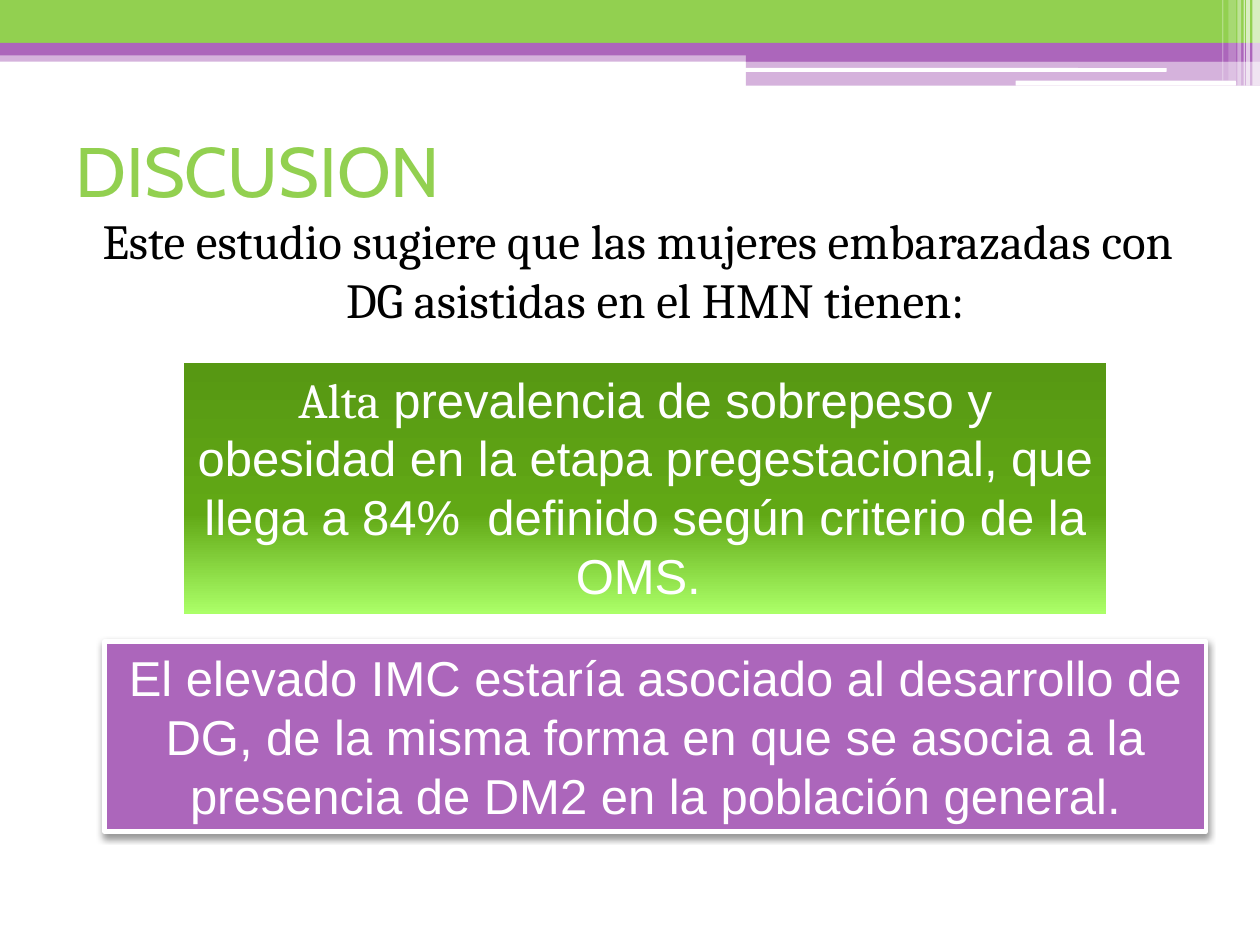
from lxml.etree import SubElement
from pptx import Presentation
from pptx.dml.color import RGBColor
from pptx.enum.shapes import MSO_SHAPE
from pptx.enum.text import MSO_ANCHOR, PP_ALIGN
from pptx.oxml import parse_xml
from pptx.oxml.ns import nsdecls, qn
from pptx.util import Inches, Pt

COLORS = {
    "green": "92D050",
    "purple": "AC66BB",
    "white": "FFFFFF",
    "black": "000000",
    "green_dark": "579813",
    "green_middle": "61A815",
    "green_light": "ABFF68",
}

HEADER_BANDS = [
    (0, 0.4, 10, 0.09, "purple", 50),
    (0, 0, 10, 0.34, "green", 100),
    (0, 0.34, 10, 0.1, "purple", 100),
    (5.92, 0.39, 4.08, 0.1, "purple", 100),
    (5.92, 0.48, 4.08, 0.2, "purple", 50),
]
HEADER_LINES = [(5.91, 0.54, 3.35, 0.03), (8.06, 0.64, 1.75, 0.04)]
EDGE_STRIPES = [
    (9.94, 0.06, 0.68, 65),
    (9.89, 0.03, 0.68, 65),
    (9.87, 0.01, 0.68, 60),
    (9.82, 0.03, 0.68, 40),
    (9.75, 0.06, 0.64, 20),
    (9.7, 0.01, 0.64, 30),
]


def rgb(name):
    return RGBColor.from_string(COLORS[name])


def add_block(slide, box, color, opacity=100, kind=MSO_SHAPE.RECTANGLE):
    shape = slide.shapes.add_shape(kind, *map(Inches, box))
    shape.shadow.inherit = False
    shape.line.fill.background()
    shape.fill.solid()
    shape.fill.fore_color.rgb = rgb(color)
    if opacity < 100:
        color_element = shape._element.spPr.find(".//" + qn("a:srgbClr"))
        SubElement(color_element, qn("a:alpha"), val=str(opacity * 1000))
    return shape


def add_header(slide):
    for *box, color, opacity in HEADER_BANDS:
        add_block(slide, box, color, opacity)
    for box in HEADER_LINES:
        line = add_block(slide, box, "white", kind=MSO_SHAPE.ROUNDED_RECTANGLE)
        line.adjustments[0] = 0.17
    for left, width, height, opacity in EDGE_STRIPES:
        add_block(slide, (left, 0, width, height), "white", opacity)


def write_text(shape, runs, color, size=28, align=PP_ALIGN.CENTER, anchor=MSO_ANCHOR.TOP):
    frame = shape.text_frame
    frame.word_wrap = True
    frame.vertical_anchor = anchor
    paragraph = frame.paragraphs[0]
    paragraph.alignment = align
    for text, font in runs:
        run = paragraph.add_run()
        run.text = text
        run.font.name = font
        run.font.size = Pt(size)
        run.font.color.rgb = rgb(color)
    return paragraph


def add_text(slide, box, runs, color, **options):
    return write_text(slide.shapes.add_textbox(*map(Inches, box)), runs, color, **options)


def set_gradient(shape, stops):
    marks = "".join(
        f'<a:gs pos="{position * 1000}"><a:srgbClr val="{COLORS[color]}"/></a:gs>'
        for position, color in stops
    )
    gradient = parse_xml(
        f'<a:gradFill {nsdecls("a")} rotWithShape="1"><a:gsLst>{marks}</a:gsLst>'
        '<a:lin ang="5400000" scaled="0"/></a:gradFill>'
    )
    properties = shape._element.spPr
    properties.replace(properties.find(qn("a:solidFill")), gradient)


def add_shadow(shape):
    effects = shape._element.spPr.find(qn("a:effectLst"))
    effects.append(parse_xml(
        f'<a:outerShdw {nsdecls("a")} blurRad="{Pt(4.1)}" dist="{Pt(2)}" dir="5400000" '
        f'rotWithShape="0"><a:srgbClr val="{COLORS["black"]}"><a:alpha val="40000"/>'
        '</a:srgbClr></a:outerShdw>'
    ))


def add_introduction(slide):
    text = "Este estudio sugiere que las mujeres embarazadas con DG asistidas en el HMN tienen:"
    paragraph = add_text(slide, (0.5, 1.62, 9, 4.73), [(text, "Cambria")], "black")
    paragraph.space_before = Pt(3)
    properties = paragraph._p.get_or_add_pPr()
    properties.set("marL", str(Inches(0.4)))
    properties.set("indent", str(Inches(-0.28)))


def add_prevalence_box(slide):
    box = add_block(slide, (1.46, 2.88, 7.32, 1.99), "green_middle")
    set_gradient(box, [(0, "green_dark"), (60, "green_middle"), (100, "green_light")])
    write_text(box, [
        ("Alta", "Cambria"),
        (" prevalencia de sobrepeso y obesidad en la etapa pregestacional, que llega a "
         "84%  definido según criterio de la OMS. ", "Arial"),
    ], "white")


def add_association_box(slide):
    box = add_block(slide, (0.83, 5.09, 8.74, 1.51), "purple")
    box.line.color.rgb = rgb("white")
    box.line.width = Pt(2.5)
    add_shadow(box)
    text = ("El elevado IMC estaría asociado al desarrollo de DG, de la misma forma en que "
            "se asocia a la presencia de DM2 en la población general.")
    paragraph = write_text(box, [(text, "Arial")], "white")
    paragraph.space_before = paragraph.space_after = Pt(6)


def main():
    presentation = Presentation()
    presentation.slide_width = Inches(10)
    presentation.slide_height = Inches(7.5)
    slide = presentation.slides.add_slide(presentation.slide_layouts[6])
    add_header(slide)
    add_text(slide, (0.5, 0.76, 9, 1.17), [("DISCUSION", "Cabin")], "green",
             size=40, align=PP_ALIGN.LEFT, anchor=MSO_ANCHOR.MIDDLE)
    add_introduction(slide)
    add_prevalence_box(slide)
    add_association_box(slide)
    presentation.save("out.pptx")


if __name__ == "__main__":
    main()
